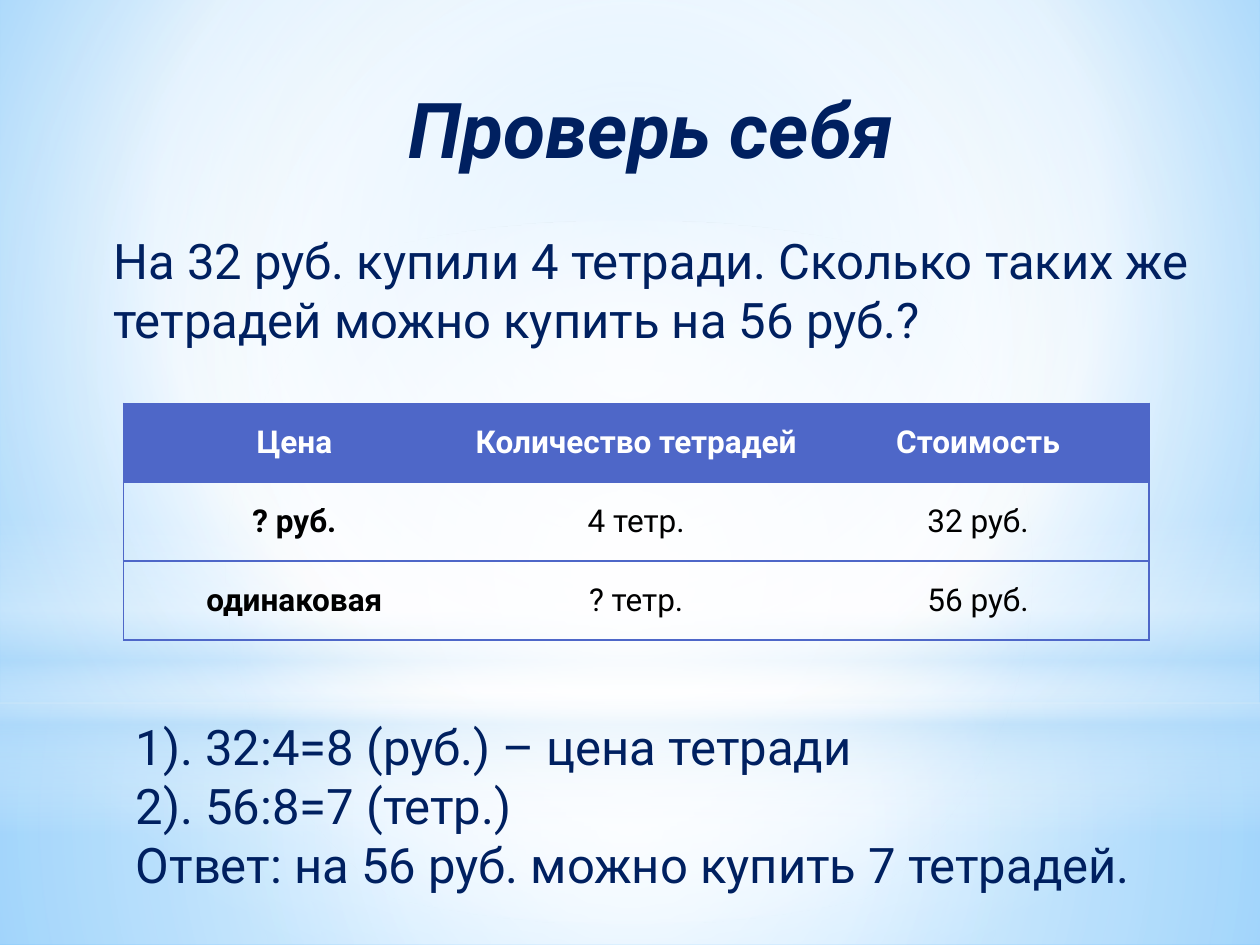
from dataclasses import dataclass, field

from lxml import etree
from pptx import Presentation
from pptx.dml.color import RGBColor
from pptx.enum.shapes import MSO_SHAPE
from pptx.enum.text import MSO_ANCHOR, MSO_AUTO_SIZE, PP_ALIGN
from pptx.oxml.ns import qn
from pptx.util import Inches, Pt

RECTANGLE, OVAL = MSO_SHAPE.RECTANGLE, MSO_SHAPE.OVAL
CENTER, LEFT = PP_ALIGN.CENTER, PP_ALIGN.LEFT
MIDDLE = MSO_ANCHOR.MIDDLE
NO_AUTOSIZE, GROW = MSO_AUTO_SIZE.NONE, MSO_AUTO_SIZE.SHAPE_TO_FIT_TEXT

COLORS = {
    "navy": "002060",
    "indigo": "4E67C8",
    "white": "FFFFFF",
    "black": "000000",
    "mist": "B4DCFA",
    "sky": "9ED5FF",
    "azure": "5BB9FF",
}
FONT = "Roboto"
MIDPOINT = (50, 50, 50, 50)


@dataclass
class Gradient:
    stops: list[tuple[int, str, int]]
    focus: tuple[int, int, int, int] | None = MIDPOINT


@dataclass
class Glow:
    outline: MSO_SHAPE
    top: float
    height: float
    gradient: Gradient


@dataclass
class Passage:
    box: tuple[float, float, float, float]
    lines: list[str]
    size: int = 28
    align: PP_ALIGN = LEFT
    autosize: MSO_AUTO_SIZE = NO_AUTOSIZE
    inset: float = 0.1
    style: dict = field(default_factory=dict)


BACKDROP = Gradient(
    [(0, "sky", 100), (60, "white", 100), (100, "azure", 100)], (20, 10, 20, 60))
GLOWS = [
    Glow(RECTANGLE, 5.58, 1.92,
         Gradient([(0, "white", 91), (37, "white", 76), (100, "mist", 79)])),
    Glow(RECTANGLE, 0, 5.58,
         Gradient([(0, "white", 89), (48, "white", 62), (100, "mist", 79)])),
    Glow(RECTANGLE, 4.12, 2.5,
         Gradient([(0, "white", 0), (29, "white", 30), (45, "mist", 40),
                   (55, "white", 26), (65, "mist", 60), (100, "white", 0)], None)),
    Glow(OVAL, 1.75, 5.58, Gradient([(0, "white", 100), (56, "white", 0)])),
]
PASSAGES = [
    Passage((1.61, 0.6, 7.12, 1.1), ["Проверь себя"], 44, CENTER,
            style={"bold": True, "italic": True}),
    Passage((0.75, 1.78, 8.82, 1.2),
            ["На 32 руб. купили 4 тетради. Сколько таких же тетрадей "
             "можно купить на 56 руб.?"], inset=0.15),
    Passage((0.98, 5.64, 8.19, 1.51),
            ["1). 32:4=8 (руб.) – цена тетради", "2). 56:8=7 (тетр.)",
             "Ответ: на 56 руб. можно купить 7 тетрадей."], autosize=GROW),
]
PRICE_ROWS = [
    ["Цена", "Количество тетрадей", "Стоимость"],
    ["? руб.", "4 тетр.", "32 руб."],
    ["одинаковая", "? тетр.", "56 руб."],
]


def rgb(name: str) -> RGBColor:
    return RGBColor.from_string(COLORS[name])


def set_font(font, size: int, color: str, **style) -> None:
    for attribute, value in {"name": FONT, "size": Pt(size), **style}.items():
        setattr(font, attribute, value)
    font.color.rgb = rgb(color)


def apply_gradient(fill, owner, gradient: Gradient) -> None:
    fill.gradient()
    grad = owner.find(f".//{qn('a:gradFill')}")
    for child in list(grad):
        grad.remove(child)
    stop_list = etree.SubElement(grad, qn("a:gsLst"))
    for position, color, opacity in gradient.stops:
        stop = etree.SubElement(stop_list, qn("a:gs"), pos=str(position * 1000))
        tint = etree.SubElement(stop, qn("a:srgbClr"), val=COLORS[color])
        if opacity < 100:
            etree.SubElement(tint, qn("a:alpha"), val=str(opacity * 1000))
    if gradient.focus is None:
        etree.SubElement(grad, qn("a:lin"), ang=str(90 * 60000), scaled="0")
    else:
        course = etree.SubElement(grad, qn("a:path"), path="circle")
        sides = {side: str(share * 1000) for side, share in zip("ltrb", gradient.focus)}
        etree.SubElement(course, qn("a:fillToRect"), **sides)


def draw_glow(slide, glow: Glow) -> None:
    shape = slide.shapes.add_shape(
        glow.outline, 0, Inches(glow.top), Inches(10), Inches(glow.height))
    shape.shadow.inherit = False
    shape.line.fill.background()
    apply_gradient(shape.fill, shape._element, glow.gradient)


def draw_passage(slide, passage: Passage) -> None:
    frame = slide.shapes.add_textbox(*map(Inches, passage.box)).text_frame
    frame.word_wrap = True
    frame.auto_size = passage.autosize
    frame.margin_left = Inches(passage.inset)
    frame.text = "\n".join(passage.lines)
    for paragraph in frame.paragraphs:
        paragraph.alignment = passage.align
        set_font(paragraph.runs[0].font, passage.size, "navy", **passage.style)


def set_borders(cell, visible: dict[str, bool]) -> None:
    properties = cell._tc.get_or_add_tcPr()
    for index, (side, shown) in enumerate(visible.items()):
        line = etree.Element(qn(f"a:ln{side}"), w=str(Pt(0.75)))
        if shown:
            solid = etree.SubElement(line, qn("a:solidFill"))
            etree.SubElement(solid, qn("a:srgbClr"), val=COLORS["indigo"])
        else:
            etree.SubElement(line, qn("a:noFill"))
        properties.insert(index, line)


def draw_price_table(slide, rows: list[list[str]]) -> None:
    table = slide.shapes.add_table(
        len(rows), len(rows[0]), Inches(0.98), Inches(3.2),
        Inches(8.14), Inches(1.88)).table
    table.first_row = table.horz_banding = False
    last_column = len(rows[0]) - 1
    cell_format = {"vertical_anchor": MIDDLE, "margin_left": Inches(0.07),
                   "margin_right": Inches(0.07), "margin_top": 0, "margin_bottom": 0}
    for r, row in enumerate(rows):
        for c, text in enumerate(row):
            cell = table.cell(r, c)
            header = r == 0
            for attribute, value in cell_format.items():
                setattr(cell, attribute, value)
            if header:
                cell.fill.solid()
                cell.fill.fore_color.rgb = rgb("indigo")
            else:
                cell.fill.background()
            set_borders(cell, {"L": c == 0, "R": c == last_column, "T": True, "B": True})
            cell.text = text
            paragraph = cell.text_frame.paragraphs[0]
            paragraph.alignment = CENTER
            set_font(paragraph.runs[0].font, 18, "white" if header else "black",
                     bold=header or c == 0)


def main() -> None:
    deck = Presentation()
    deck.slide_width, deck.slide_height = Inches(10), Inches(7.5)
    slide = deck.slides.add_slide(deck.slide_layouts[6])
    apply_gradient(slide.background.fill, slide._element, BACKDROP)
    for glow in GLOWS:
        draw_glow(slide, glow)
    title, problem, solution = PASSAGES
    draw_passage(slide, title)
    draw_passage(slide, problem)
    draw_price_table(slide, PRICE_ROWS)
    draw_passage(slide, solution)
    deck.save("out.pptx")


if __name__ == "__main__":
    main()
